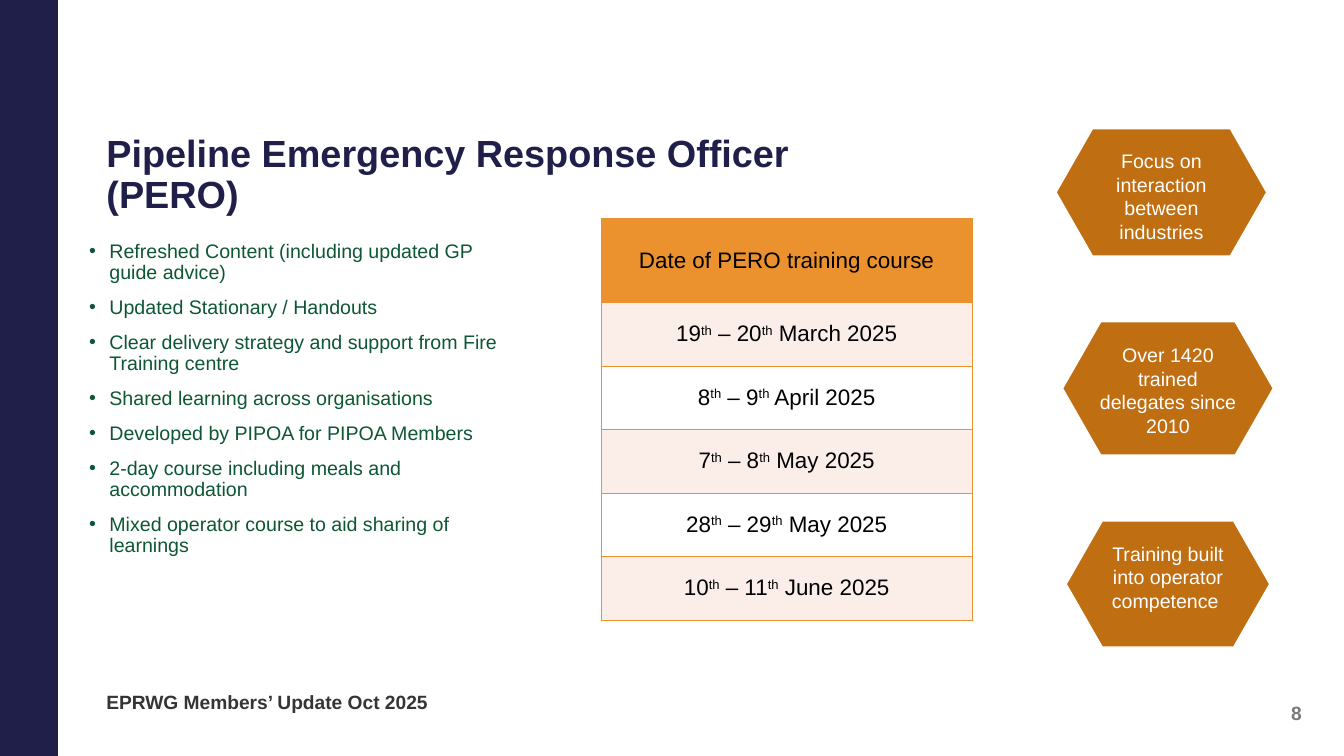
from lxml import etree
from pptx import Presentation
from pptx.dml.color import RGBColor
from pptx.enum.shapes import MSO_SHAPE
from pptx.enum.text import MSO_ANCHOR, MSO_AUTO_SIZE, PP_ALIGN
from pptx.oxml.ns import qn
from pptx.util import Cm, Pt

RECTANGLE, HEXAGON = MSO_SHAPE.RECTANGLE, MSO_SHAPE.HEXAGON
TOP, MIDDLE = MSO_ANCHOR.TOP, MSO_ANCHOR.MIDDLE
LEFT, CENTER, RIGHT = PP_ALIGN.LEFT, PP_ALIGN.CENTER, PP_ALIGN.RIGHT

NAVY = RGBColor(0x20, 0x1F, 0x4A)
GREEN = RGBColor(0x0E, 0x57, 0x35)
BROWN = RGBColor(0xC0, 0x6E, 0x12)
ORANGE = RGBColor(0xEB, 0x91, 0x2D)
PEACH = RGBColor(0xFB, 0xEE, 0xE8)
WHITE = RGBColor(0xFF, 0xFF, 0xFF)
BLACK = RGBColor(0x00, 0x00, 0x00)
DARK_GREY = RGBColor(0x36, 0x35, 0x35)
MID_GREY = RGBColor(0x7A, 0x7A, 0x7A)

COURSE_POINTS = [
    "Refreshed Content (including updated GP guide advice)",
    "Updated Stationary / Handouts",
    "Clear delivery strategy and support from Fire Training centre",
    "Shared learning across organisations",
    "Developed by PIPOA for PIPOA Members",
    "2-day course including meals and accommodation",
    "Mixed operator course to aid sharing of learnings",
]
# First day, second day, month
COURSE_DATES = [
    (19, 20, "March"),
    (8, 9, "April"),
    (7, 8, "May"),
    (28, 29, "May"),
    (10, 11, "June"),
]
# Text, then left, top, width and height in cm
HIGHLIGHTS = [
    ("Focus on interaction between industries", 53.21, 6.48, 10.62, 6.43),
    ("Over 1420 trained delegates since 2010", 53.54, 16.21, 10.62, 6.73),
    ("Training built into operator competence ", 53.72, 26.26, 10.26, 6.35),
]


def place(shape, left, top, width, height):
    shape.left, shape.top = Cm(left), Cm(top)
    shape.width, shape.height = Cm(width), Cm(height)


def style(paragraph, size, color, align=LEFT, bold=False):
    paragraph.alignment = align
    font = paragraph.font
    font.name, font.size, font.bold = "Arial", Pt(size), bold
    font.color.rgb = color


def set_frame(frame, anchor=TOP):
    frame.word_wrap = True
    frame.auto_size = MSO_AUTO_SIZE.NONE
    frame.vertical_anchor = anchor


def add_panel(slide, kind, box, fill, line):
    panel = slide.shapes.add_shape(kind, *map(Cm, box))
    panel.shadow.inherit = False
    panel.fill.solid()
    panel.fill.fore_color.rgb = fill
    panel.line.color.rgb = line
    panel.line.width = Pt(2)
    return panel


def add_label(slide, text, box, color, align, anchor):
    label = slide.shapes.add_textbox(*map(Cm, box))
    set_frame(label.text_frame, anchor)
    paragraph = label.text_frame.paragraphs[0]
    paragraph.text = text
    style(paragraph, 27.4, color, align, bold=True)


def add_highlight(slide, text, *box):
    hexagon = add_panel(slide, HEXAGON, box, BROWN, WHITE)
    hexagon.adjustments[0] = 0.286
    set_frame(hexagon.text_frame)
    paragraph = hexagon.text_frame.paragraphs[0]
    paragraph.text = text
    style(paragraph, 28, WHITE, CENTER)


def fill_title(title):
    place(title, 5.11, 6.68, 39.42, 2.84)
    set_frame(title.text_frame)
    paragraph = title.text_frame.paragraphs[0]
    paragraph.text = "Pipeline Emergency Response Officer (PERO)"
    paragraph.line_spacing = 0.9
    style(paragraph, 54, NAVY, bold=True)


def fill_points(body):
    place(body, 4.24, 12.04, 21.84, 19.71)
    frame = body.text_frame
    set_frame(frame)
    for i, point in enumerate(COURSE_POINTS):
        paragraph = frame.add_paragraph() if i else frame.paragraphs[0]
        paragraph.text = point
        paragraph.line_spacing = 0.9
        paragraph.space_before = Pt(19.7 if i else 0)
        properties = paragraph._p.get_or_add_pPr()
        properties.set("marL", str(Cm(1.02)))
        properties.set("indent", str(Cm(-1.02)))
        etree.SubElement(properties, qn("a:buChar"), char="•")
        style(paragraph, 28, GREEN)


def format_cell(cell, fill):
    properties = cell._tc.get_or_add_tcPr()
    for side in ("a:lnL", "a:lnR", "a:lnT", "a:lnB"):
        border = etree.SubElement(properties, qn(side), w=str(Pt(1)))
        solid = etree.SubElement(border, qn("a:solidFill"))
        etree.SubElement(solid, qn("a:srgbClr"), val=str(ORANGE))
    cell.fill.solid()
    cell.fill.fore_color.rgb = fill
    cell.vertical_anchor = MIDDLE
    cell.margin_left = cell.margin_right = Cm(0.1)
    cell.margin_top = cell.margin_bottom = Cm(0.1)
    paragraph = cell.text_frame.paragraphs[0]
    paragraph.space_before = paragraph.space_after = Pt(3)
    style(paragraph, 32, BLACK, CENTER)


def write_dates(paragraph, first, second, month):
    for text in (str(first), "th", f" – {second}", "th", f" {month} 2025"):
        run = paragraph.add_run()
        run.text = text
        if text == "th":
            run._r.get_or_add_rPr().set("baseline", "30000")


def add_date_table(slide):
    header_height, row_height = 4.22, 3.2
    rows = len(COURSE_DATES) + 1
    height = header_height + row_height * len(COURSE_DATES)
    box = map(Cm, (30.28, 11.02, 18.72, height))
    table = slide.shapes.add_table(rows, 1, *box).table
    table.first_row = table.horz_banding = False

    table.rows[0].height = Cm(header_height)
    header = table.cell(0, 0)
    header.text = "Date of PERO training course"
    format_cell(header, ORANGE)
    for row, dates in enumerate(COURSE_DATES, start=1):
        table.rows[row].height = Cm(row_height)
        cell = table.cell(row, 0)
        write_dates(cell.text_frame.paragraphs[0], *dates)
        format_cell(cell, PEACH if row % 2 else WHITE)


def main():
    deck = Presentation()
    deck.slide_width, deck.slide_height = Cm(67.72), Cm(38.1)
    slide = deck.slides.add_slide(deck.slide_layouts[1])

    # Side band, footer and page number
    add_panel(slide, RECTANGLE, (0, 0, 2.87, 38.1), NAVY, NAVY)
    add_label(slide, "EPRWG Members’ Update Oct 2025",
              (5.11, 34.67, 21.84, 1.45), DARK_GREY, LEFT, MIDDLE)
    add_label(slide, "8", (63.86, 35.23, 1.98, 1.45), MID_GREY, RIGHT, TOP)

    # Title and course points
    fill_title(slide.shapes.title)
    fill_points(slide.placeholders[1])

    # Highlights and course dates
    for highlight in HIGHLIGHTS:
        add_highlight(slide, *highlight)
    add_date_table(slide)

    deck.save("out.pptx")


if __name__ == "__main__":
    main()
